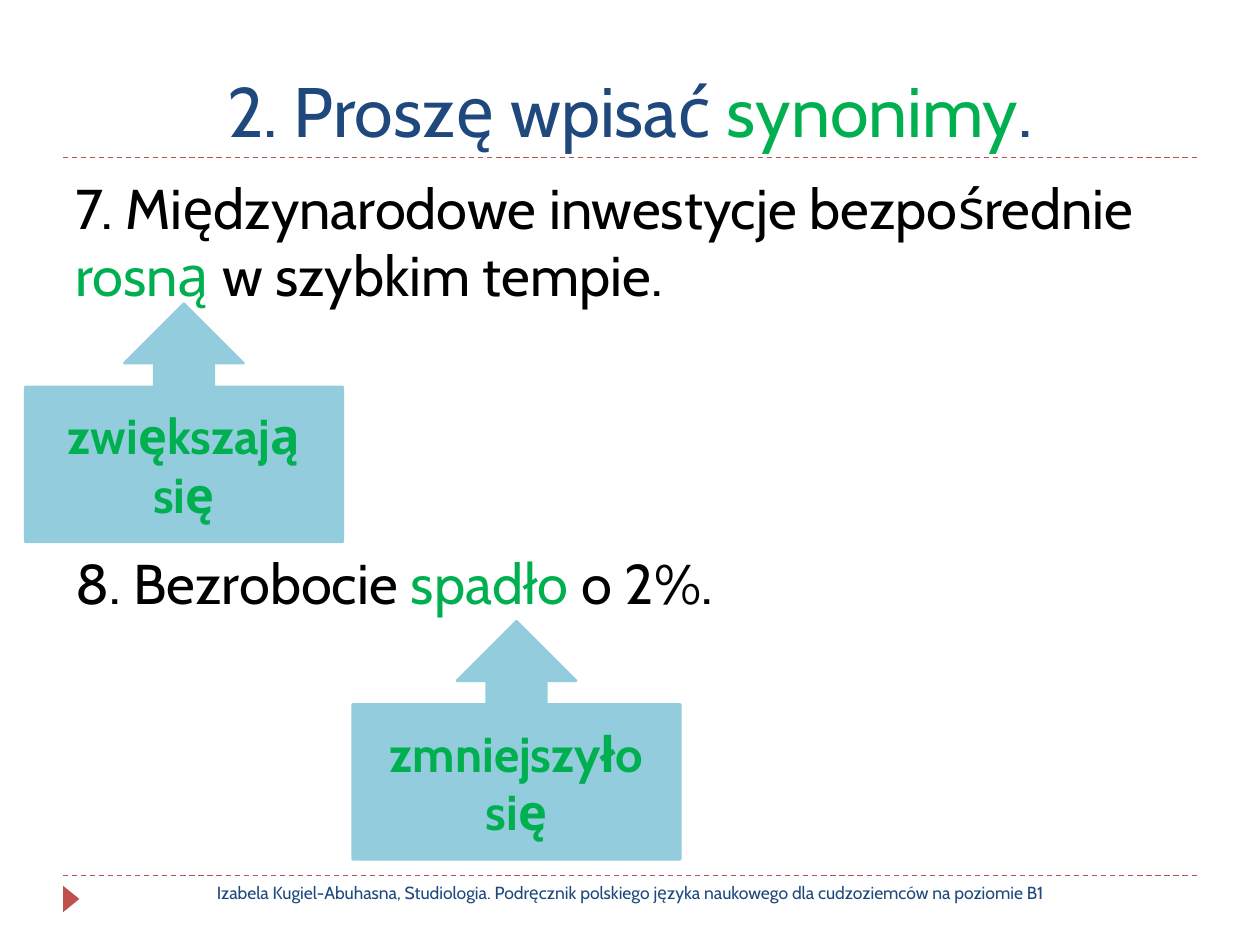
from dataclasses import dataclass

from pptx import Presentation
from pptx.dml.color import RGBColor
from pptx.enum.dml import MSO_LINE
from pptx.enum.shapes import MSO_CONNECTOR, MSO_SHAPE
from pptx.enum.text import MSO_ANCHOR, PP_ALIGN
from pptx.oxml.ns import qn
from pptx.util import Inches, Pt


@dataclass(frozen=True)
class Theme:
    """Colours, font and type sizes of the slide."""

    font: str = "Cabin"
    navy: RGBColor = RGBColor(0x1F, 0x49, 0x7D)
    green: RGBColor = RGBColor(0x00, 0xB0, 0x50)
    black: RGBColor = RGBColor(0x00, 0x00, 0x00)
    red: RGBColor = RGBColor(0xC0, 0x50, 0x4D)
    light_blue: RGBColor = RGBColor(0x93, 0xCD, 0xDD)
    title_size: Pt = Pt(40)
    sentence_size: Pt = Pt(32)
    answer_size: Pt = Pt(28)
    footer_size: Pt = Pt(10)


THEME = Theme()


def write_paragraph(shape, runs, size, alignment, anchor=MSO_ANCHOR.TOP):
    """Write (text, colour) runs as the one paragraph of a shape and return it."""
    frame = shape.text_frame
    frame.word_wrap = True
    frame.vertical_anchor = anchor
    paragraph = frame.paragraphs[0]
    paragraph.alignment = alignment
    paragraph.font.name = THEME.font
    paragraph.font.size = size
    for text, colour in runs:
        run = paragraph.add_run()
        run.text = text
        run.font.color.rgb = colour
    return paragraph


def add_rule(slide, left, top, width):
    """Draw a dashed horizontal rule."""
    rule = slide.shapes.add_connector(
        MSO_CONNECTOR.STRAIGHT, left, top, left + width, top
    )
    rule.line.color.rgb = THEME.red
    rule.line.width = Pt(0.75)
    rule.line.dash_style = MSO_LINE.DASH
    properties = rule._element.spPr
    properties.append(properties.makeelement(qn("a:effectLst"), {}))


def add_title(slide, left, top, width, height):
    """Place the heading with a rule along its lower edge."""
    add_rule(slide, left, top + height, width)
    box = slide.shapes.add_textbox(left, top, width, height)
    runs = [
        ("2. Proszę wpisać ", THEME.navy),
        ("synonimy", THEME.green),
        (".", THEME.navy),
    ]
    write_paragraph(box, runs, THEME.title_size, PP_ALIGN.CENTER, MSO_ANCHOR.BOTTOM)


def add_sentence(slide, left, top, width, height, before, keyword, after):
    """Place an exercise sentence with its keyword highlighted."""
    box = slide.shapes.add_textbox(left, top, width, height)
    runs = [(before, THEME.black), (keyword, THEME.green), (after, THEME.black)]
    paragraph = write_paragraph(box, runs, THEME.sentence_size, PP_ALIGN.LEFT)
    paragraph.space_before = Pt(6)


def add_answer(slide, left, top, width, height, synonym):
    """Place an upward callout holding the synonym."""
    callout = slide.shapes.add_shape(
        MSO_SHAPE.UP_ARROW_CALLOUT, left, top, width, height
    )
    callout.shadow.inherit = False
    callout.fill.solid()
    callout.fill.fore_color.rgb = THEME.light_blue
    callout.line.color.rgb = THEME.light_blue
    callout.line.width = Pt(1.5)
    paragraph = write_paragraph(
        callout,
        [(synonym, THEME.green)],
        THEME.answer_size,
        PP_ALIGN.CENTER,
        MSO_ANCHOR.MIDDLE,
    )
    paragraph.font.bold = True


def add_footer(slide, left, top, width, height):
    """Place the rule, the marker and the credit line at the foot."""
    add_rule(slide, left, top, width)
    marker = slide.shapes.add_shape(
        MSO_SHAPE.ISOSCELES_TRIANGLE,
        left - Inches(0.04),
        top + Inches(0.12),
        Inches(0.21),
        Inches(0.13),
    )
    marker.rotation = 90
    marker.shadow.inherit = False
    marker.fill.solid()
    marker.fill.fore_color.rgb = THEME.red
    marker.line.fill.background()
    margin = Inches(0.37)
    box = slide.shapes.add_textbox(left + margin, top, width - 2 * margin, height)
    credit = (
        "Izabela Kugiel-Abuhasna, Studiologia. Podręcznik polskiego języka "
        "naukowego dla cudzoziemców na poziomie B1"
    )
    write_paragraph(box, [(credit, THEME.navy)], THEME.footer_size, PP_ALIGN.CENTER)


def main():
    """Build the synonym exercise slide and save it."""
    presentation = Presentation()
    presentation.slide_width = Inches(10)
    presentation.slide_height = Inches(7.5)
    slide = presentation.slides.add_slide(presentation.slide_layouts[6])
    left, width = Inches(0.5), Inches(9)

    add_title(slide, left, Inches(0.17), width, Inches(1.08))
    add_footer(slide, left, Inches(6.95), width, Inches(0.4))
    add_answer(
        slide, Inches(0.2), Inches(2.41), Inches(2.52), Inches(1.89), "zwiększają się"
    )
    add_answer(
        slide, Inches(2.8), Inches(4.93), Inches(2.6), Inches(1.89), "zmniejszyło się"
    )
    add_sentence(
        slide, left, Inches(1.33), width, Inches(2.97),
        "7. Międzynarodowe inwestycje bezpośrednie ", "rosną", " w szybkim tempie.",
    )
    add_sentence(
        slide, left, Inches(4.3), width, Inches(2.52),
        "8. Bezrobocie ", "spadło", " o 2%.",
    )
    presentation.save("out.pptx")


if __name__ == "__main__":
    main()
